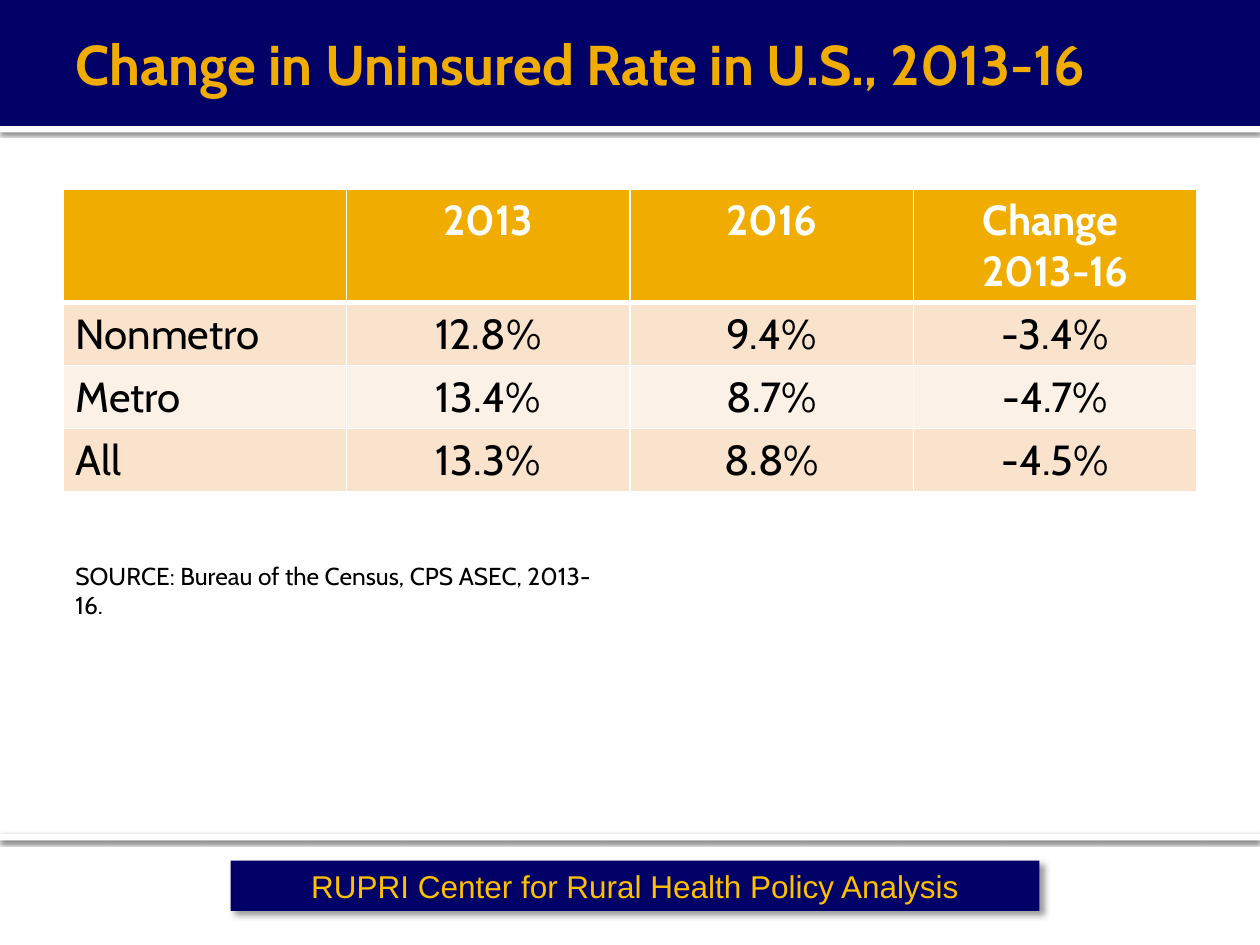
from lxml.etree import SubElement
from pptx import Presentation
from pptx.dml.color import RGBColor
from pptx.enum.shapes import MSO_SHAPE as Shape
from pptx.enum.text import MSO_ANCHOR as Anchor, PP_ALIGN as Align
from pptx.oxml.ns import qn
from pptx.util import Inches, Pt

NAVY, GOLD, WHITE, BLACK = "000066", "F0AD00", "FFFFFF", "000000"
BANDS = ("F9E3CC", "FCF1E7")
RULE_SHADOW = (60, 2.5, 0.8, 90)
FOOTER_SHADOW = (40, 4, 3, 45)
RATES = [
    ("", "2013", "2016", "Change \n2013-16"),
    ("Nonmetro", "12.8%", "9.4%", "-3.4%"),
    ("Metro", "13.4%", "8.7%", "-4.7%"),
    ("All", "13.3%", "8.8%", "-4.5%"),
]


def rgb(code):
    return RGBColor.from_string(code)


class SlideBuilder:
    """Holds the style and the current slide, and draws each kind of element."""

    def __init__(self, slide, font="Cabin"):
        self.slide = slide
        self.font = font

    def set_text(self, frame, text, size, color, bold=False, align=Align.LEFT, font=None):
        frame.text = text
        style = {"name": font or self.font, "size": Pt(size), "bold": bold}
        for paragraph in frame.paragraphs:
            paragraph.alignment = align
            for key, value in style.items():
                setattr(paragraph.font, key, value)
            paragraph.font.color.rgb = rgb(color)

    def bar(self, left, top, width, height, fill, shadow=None):
        bar = self.slide.shapes.add_shape(
            Shape.RECTANGLE, Inches(left), Inches(top), Inches(width), Inches(height))
        bar.fill.solid()
        bar.fill.fore_color.rgb = rgb(fill)
        bar.line.fill.background()
        bar.shadow.inherit = False
        if shadow:
            self.cast_shadow(bar, *shadow)
        return bar

    def cast_shadow(self, bar, opacity, blur, distance, angle):
        effects = bar._element.spPr.find(qn("a:effectLst"))
        outer = SubElement(
            effects, qn("a:outerShdw"), blurRad=str(Pt(blur)), dist=str(Pt(distance)),
            dir=str(angle * 60000), algn="ctr", rotWithShape="0")
        color = SubElement(outer, qn("a:srgbClr"), val=BLACK)
        SubElement(color, qn("a:alpha"), val=str(opacity * 1000))

    def label(self, left, top, width, height, text, size, color, bold=False, anchor=Anchor.TOP):
        frame = self.slide.shapes.add_textbox(
            Inches(left), Inches(top), Inches(width), Inches(height)).text_frame
        frame.word_wrap = True
        frame.vertical_anchor = anchor
        self.set_text(frame, text, size, color, bold)

    def table(self, left, top, width, row_heights, rows):
        table = self.slide.shapes.add_table(
            len(rows), len(rows[0]), Inches(left), Inches(top),
            Inches(width), Inches(sum(row_heights))).table
        for r, (height, texts) in enumerate(zip(row_heights, rows)):
            table.rows[r].height = Inches(height)
            header = r == 0
            for c, text in enumerate(texts):
                cell = table.cell(r, c)
                align = Align.CENTER if c else Align.LEFT
                self.set_text(cell.text_frame, text, 24, WHITE if header else BLACK, header, align)
                self.borders(cell, top=3 if r == 1 else 1, bottom=3 if header else 1)
                cell.fill.solid()
                cell.fill.fore_color.rgb = rgb(GOLD if header else BANDS[(r - 1) % 2])

    def borders(self, cell, top, bottom):
        properties = cell._tc.get_or_add_tcPr()
        for side, weight in {"L": 1, "R": 1, "T": top, "B": bottom}.items():
            line = SubElement(properties, qn(f"a:ln{side}"), w=str(Pt(weight)))
            fill = SubElement(line, qn("a:solidFill"))
            SubElement(fill, qn("a:srgbClr"), val=WHITE)


def main():
    deck = Presentation()
    deck.slide_width, deck.slide_height = Inches(10), Inches(7.5)
    builder = SlideBuilder(deck.slides.add_slide(deck.slide_layouts[6]))

    builder.bar(0, 1, 10, 0.05, WHITE, RULE_SHADOW)
    builder.bar(0, 0, 10, 1, NAVY)
    footer = builder.bar(1.83, 6.83, 6.42, 0.4, NAVY, FOOTER_SHADOW)
    builder.set_text(footer.text_frame, "RUPRI Center for Rural Health Policy Analysis",
                     18, "FFC000", align=Align.CENTER, font="Arial")
    builder.bar(0, 6.62, 10, 0.05, WHITE, RULE_SHADOW)

    builder.label(0.5, 0, 9, 1, "Change in Uninsured Rate in U.S., 2013-16",
                  32, GOLD, bold=True, anchor=Anchor.MIDDLE)
    builder.table(0.5, 1.5, 9, (0.9, 0.5, 0.5, 0.5), RATES)
    builder.label(0.5, 4.4, 4.4, 0.34,
                  "SOURCE: Bureau of the Census, CPS ASEC, 2013-16.", 14, BLACK)
    deck.save("out.pptx")


if __name__ == "__main__":
    main()
